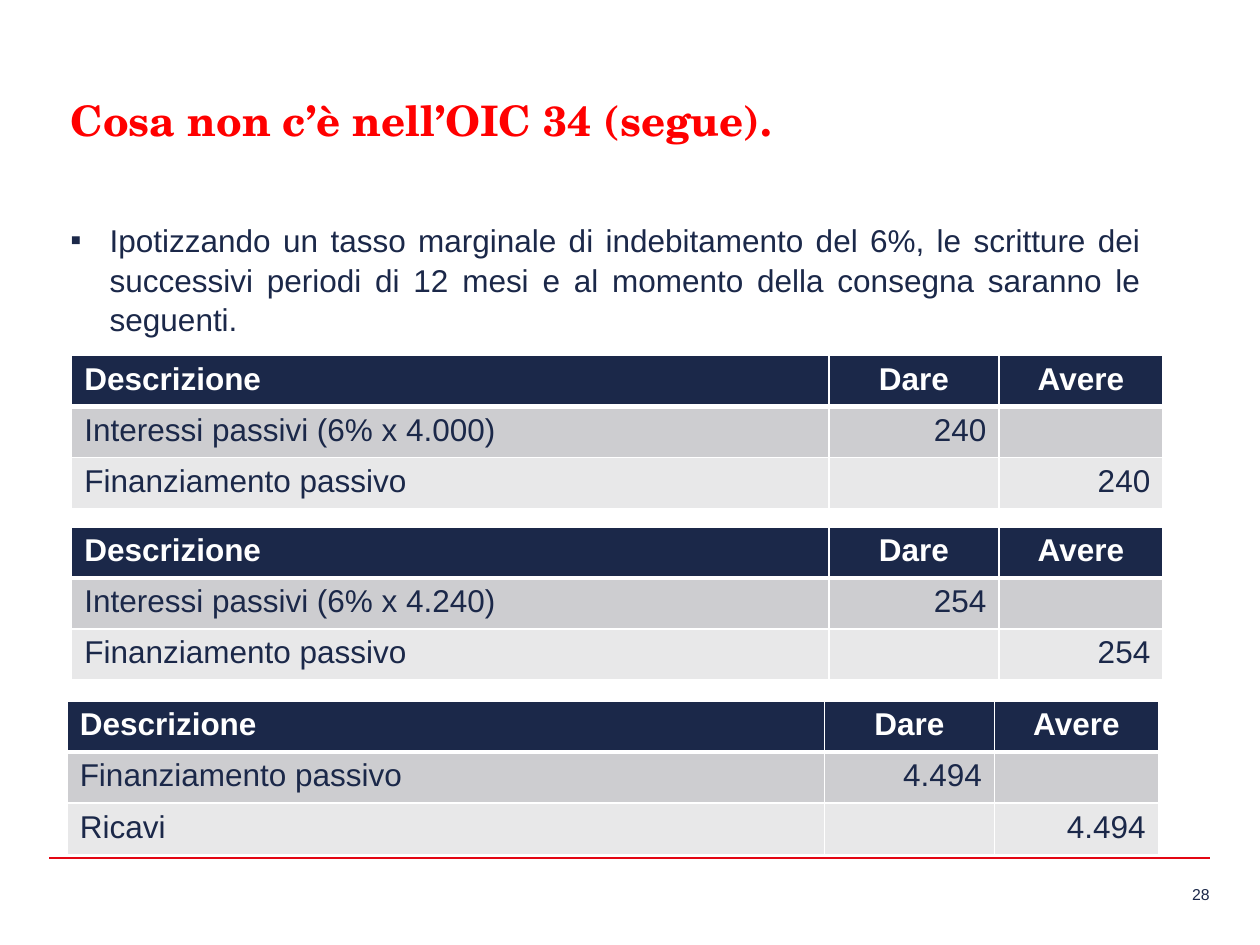
"""Build the slide with the journal entries for the financing component."""
from lxml import etree
from pptx import Presentation
from pptx.dml.color import RGBColor
from pptx.enum import shapes, text
from pptx.oxml import ns
from pptx.util import Pt

NAVY = RGBColor(0x1B, 0x28, 0x49)
RED = RGBColor(0xFF, 0x00, 0x00)
RULE_RED = RGBColor(0xE3, 0x06, 0x13)
WHITE = RGBColor(0xFF, 0xFF, 0xFF)
ROW_FILLS = [NAVY, RGBColor(0xCD, 0xCD, 0xD0), RGBColor(0xE8, 0xE8, 0xE9)]
COLUMN_WIDTHS = [432.7, 97.2, 93.6]
ROW_HEIGHT = 29.25
HEADER = ["Descrizione", "Dare", "Avere"]
ENTRIES = [
    (41, 203, "Interessi passivi (6% x 4.000)", "Finanziamento passivo", "240"),
    (41, 301, "Interessi passivi (6% x 4.240)", "Finanziamento passivo", "254"),
    (38.4, 400.5, "Finanziamento passivo", "Ricavi", "4.494"),
]


def style_font(paragraph, size, color, bold=False, name="Arial"):
    font = paragraph.runs[0].font
    font.name, font.size, font.bold = name, Pt(size), bold
    font.color.rgb = color


def add_border(cell, side, width):
    line = etree.SubElement(cell._tc.get_or_add_tcPr(), ns.qn(f"a:ln{side}"), w=str(Pt(width)))
    fill = etree.SubElement(line, ns.qn("a:solidFill"))
    etree.SubElement(fill, ns.qn("a:srgbClr"), val=str(WHITE))


presentation = Presentation()
presentation.slide_width, presentation.slide_height = Pt(720), Pt(540)
slide = presentation.slides.add_slide(presentation.slide_layouts[5])

title = slide.shapes.title
title.left, title.top, title.width, title.height = Pt(33.1), Pt(50.4), Pt(666.7), Pt(36)
title.text_frame.text = "Cosa non c’è nell’OIC 34 (segue)."
title.text_frame.vertical_anchor = text.MSO_ANCHOR.TOP
title.text_frame.auto_size = text.MSO_AUTO_SIZE.NONE
title.text_frame.paragraphs[0].alignment = text.PP_ALIGN.LEFT
style_font(title.text_frame.paragraphs[0], 24, RED, True, "TeX Gyre Schola")

rule = slide.shapes.add_connector(
    shapes.MSO_CONNECTOR.STRAIGHT, Pt(28.1), Pt(490.3), Pt(691.2), Pt(490.3))
rule.line.color.rgb = RULE_RED
rule.line.width = Pt(1)
etree.SubElement(rule._element.spPr, ns.qn("a:effectLst"))

body = slide.shapes.add_textbox(Pt(33.1), Pt(121.7), Pt(625.7), Pt(319.7))
body.text_frame.word_wrap = True
body.text_frame.text = (
    "Ipotizzando un tasso marginale di indebitamento del 6%, le scritture dei successivi "
    "periodi di 12 mesi e al momento della consegna saranno le seguenti.")
paragraph = body.text_frame.paragraphs[0]
paragraph.alignment = text.PP_ALIGN.JUSTIFY
paragraph.line_spacing = 1.05
properties = paragraph._p.get_or_add_pPr()
properties.set("marL", str(Pt(22.5)))
properties.set("indent", str(-Pt(22.5)))
etree.SubElement(properties, ns.qn("a:buFont"), typeface="Arial")
etree.SubElement(properties, ns.qn("a:buChar"), char="▪")
style_font(paragraph, 18, NAVY)

for left, top, debit, credit, amount in ENTRIES:
    rows = [HEADER, [debit, amount, ""], [credit, "", amount]]
    table = slide.shapes.add_table(
        3, 3, Pt(left), Pt(top), Pt(sum(COLUMN_WIDTHS)), Pt(3 * ROW_HEIGHT)).table
    for column, width in zip(table.columns, COLUMN_WIDTHS):
        column.width = Pt(width)
    for row_index, values in enumerate(rows):
        table.rows[row_index].height = Pt(ROW_HEIGHT)
        is_header = row_index == 0
        for column_index, value in enumerate(values):
            cell = table.cell(row_index, column_index)
            for side in "LRTB":
                heavy = (row_index, side) in [(0, "B"), (1, "T")]
                add_border(cell, side, 3 if heavy else 1)
            cell.fill.solid()
            cell.fill.fore_color.rgb = ROW_FILLS[row_index]
            paragraph = cell.text_frame.paragraphs[0]
            paragraph.font.size = Pt(18)
            if value:
                paragraph.text = value
                style_font(paragraph, 18, WHITE if is_header else NAVY, is_header)
            if column_index:
                paragraph.alignment = text.PP_ALIGN.CENTER if is_header else text.PP_ALIGN.RIGHT

number = slide.shapes.add_textbox(Pt(641.5), Pt(505.4), Pt(49.7), Pt(10.8))
frame = number.text_frame
frame.margin_left = frame.margin_top = frame.margin_right = frame.margin_bottom = 0
frame.word_wrap = True
frame.text = "28"
frame.paragraphs[0].alignment = text.PP_ALIGN.RIGHT
style_font(frame.paragraphs[0], 9, NAVY)

presentation.save("out.pptx")
